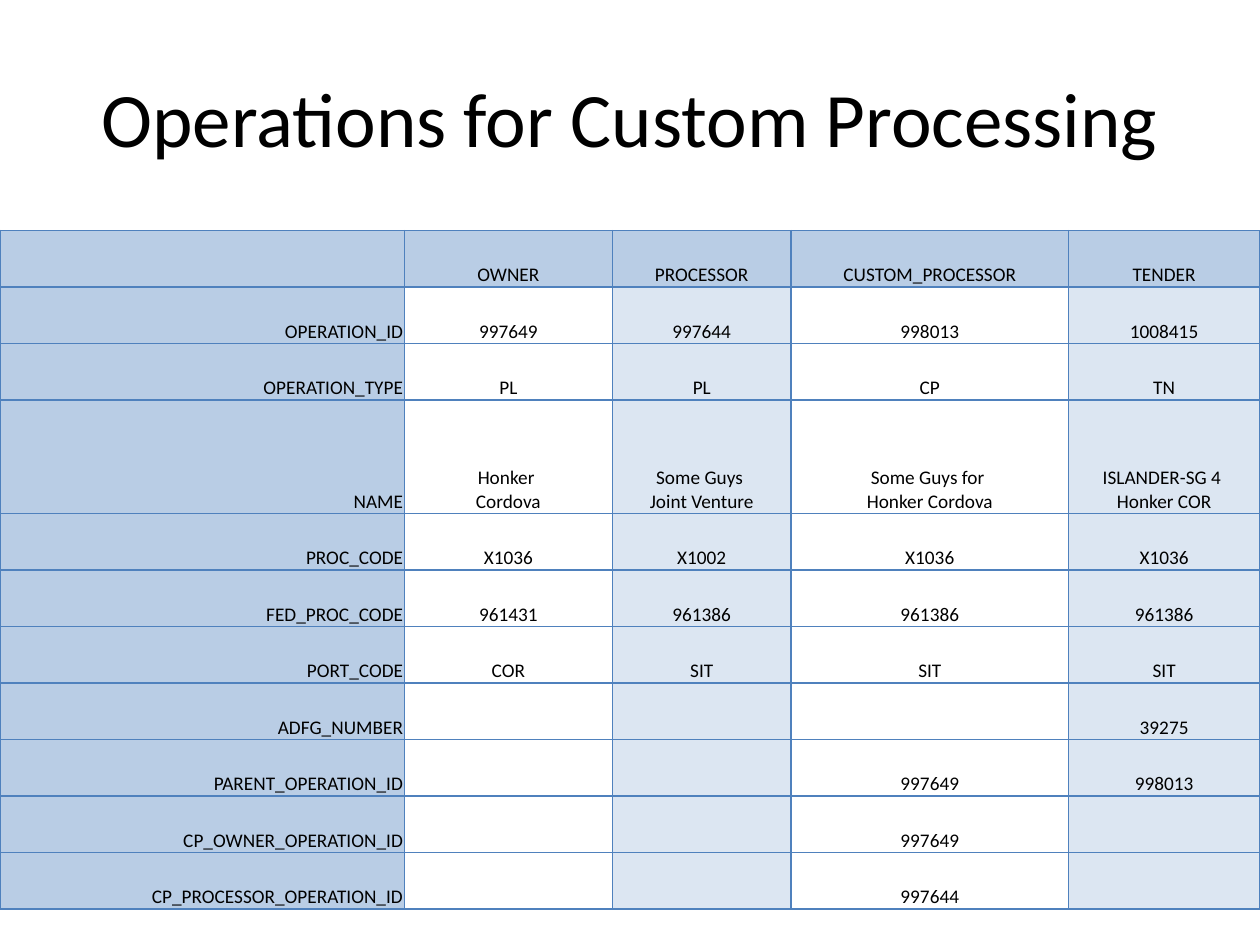
from lxml.etree import SubElement
from pptx import Presentation
from pptx.dml.color import RGBColor
from pptx.enum.text import MSO_ANCHOR as Anchor, PP_ALIGN as Align
from pptx.oxml.ns import qn
from pptx.util import Inches, Pt

TITLE = "Operations for Custom Processing"
# A vertical tab (\v) is a line break inside a paragraph.
ROWS = [
    ("", "OWNER", "PROCESSOR", "CUSTOM_PROCESSOR", "TENDER"),
    ("OPERATION_ID", "997649", "997644", "998013", "1008415"),
    ("OPERATION_TYPE", "PL", "PL", "CP", "TN"),
    ("NAME", "Honker \vCordova", "Some Guys \vJoint Venture",
     "Some Guys for \vHonker Cordova", "ISLANDER-SG 4 \vHonker COR"),
    ("PROC_CODE", "X1036", "X1002", "X1036", "X1036"),
    ("FED_PROC_CODE", "961431", "961386", "961386", "961386"),
    ("PORT_CODE", "COR", "SIT", "SIT", "SIT"),
    ("ADFG_NUMBER", "", "", "", "39275"),
    ("PARENT_OPERATION_ID", "", "", "997649", "998013"),
    ("CP_OWNER_OPERATION_ID", "", "", "997649", ""),
    ("CP_PROCESSOR_OPERATION_ID", "", "", "997644", ""),
]
COLUMN_WIDTHS = [3.21, 1.65, 1.42, 2.2, 1.52]
TABLE_TOP, TABLE_HEIGHT = 1.83, 5.39
ROW_HEIGHT = TABLE_HEIGHT / (len(ROWS) + 1)  # the NAME row counts twice

FONT = "Calibri"
BLACK = RGBColor(0x00, 0x00, 0x00)
HEADER_BLUE = RGBColor(0xB9, 0xCD, 0xE5)
BAND_BLUE = RGBColor(0xDC, 0xE6, 0xF2)
BORDER_BLUE = RGBColor(0x4F, 0x81, 0xBD)


def format_text(text_frame, size, alignment):
    for paragraph in text_frame.paragraphs:
        paragraph.alignment = alignment
        for item in (paragraph, *paragraph.runs):
            item.font.name = FONT
            item.font.size = Pt(size)
            item.font.color.rgb = BLACK


def add_borders(cell):
    properties = cell._tc.get_or_add_tcPr()
    for side in ("a:lnL", "a:lnR", "a:lnT", "a:lnB"):
        line = SubElement(properties, qn(side), w=str(Pt(1)))
        fill = SubElement(line, qn("a:solidFill"))
        SubElement(fill, qn("a:srgbClr"), val=str(BORDER_BLUE))


def fill_cell(cell, row_index, column_index):
    if row_index == 0 or column_index == 0:
        color = HEADER_BLUE
    elif column_index % 2 == 0:
        color = BAND_BLUE
    else:
        cell.fill.background()
        return
    cell.fill.solid()
    cell.fill.fore_color.rgb = color


def add_title(slide):
    title = slide.shapes.add_textbox(Inches(0.5), Inches(0.3), Inches(9), Inches(1.25))
    text_frame = title.text_frame
    text_frame.word_wrap = True
    text_frame.vertical_anchor = Anchor.MIDDLE
    text_frame.text = TITLE
    format_text(text_frame, 44, Align.CENTER)


def add_operations_table(slide):
    table = slide.shapes.add_table(
        len(ROWS), len(COLUMN_WIDTHS), Inches(0), Inches(TABLE_TOP),
        Inches(sum(COLUMN_WIDTHS)), Inches(TABLE_HEIGHT)).table
    table.first_row = table.horz_banding = False
    for column, width in zip(table.columns, COLUMN_WIDTHS):
        column.width = Inches(width)
    for row_index, values in enumerate(ROWS):
        row_span = 2 if values[0] == "NAME" else 1
        table.rows[row_index].height = Inches(ROW_HEIGHT * row_span)
        for column_index, value in enumerate(values):
            cell = table.cell(row_index, column_index)
            cell.margin_left = cell.margin_right = cell.margin_top = Inches(0.01)
            cell.margin_bottom = 0
            cell.vertical_anchor = Anchor.BOTTOM
            cell.text_frame.text = value
            format_text(cell.text_frame, 11, Align.CENTER if column_index else Align.RIGHT)
            add_borders(cell)
            fill_cell(cell, row_index, column_index)


def main():
    presentation = Presentation()
    presentation.slide_width, presentation.slide_height = Inches(10), Inches(7.5)
    slide = presentation.slides.add_slide(presentation.slide_layouts[6])
    add_title(slide)
    add_operations_table(slide)
    presentation.save("out.pptx")


if __name__ == "__main__":
    main()
